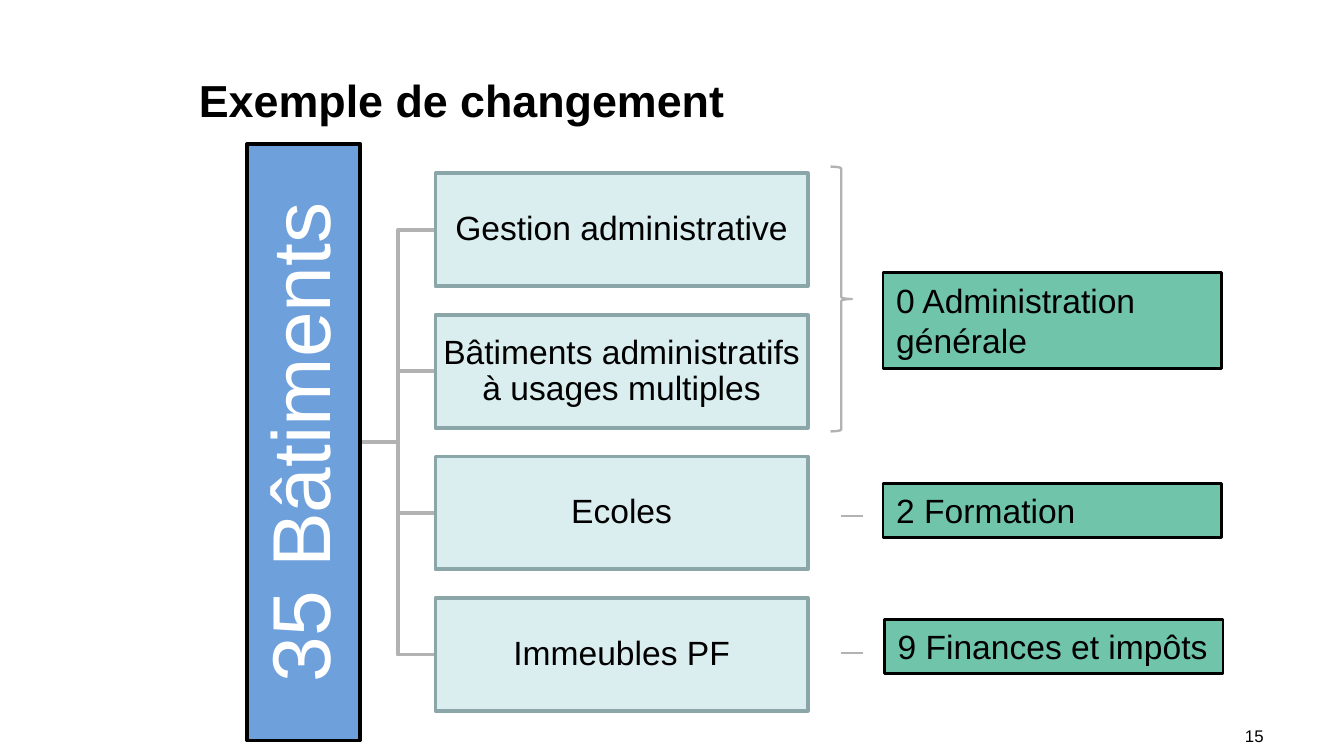
from dataclasses import dataclass

from lxml import etree
from pptx import Presentation
from pptx.dml.color import RGBColor
from pptx.enum.shapes import MSO_CONNECTOR, MSO_SHAPE
from pptx.enum.text import MSO_ANCHOR, PP_ALIGN
from pptx.oxml.ns import qn
from pptx.util import Inches, Pt

RECTANGLE = MSO_SHAPE.RECTANGLE
RIGHT_BRACE = MSO_SHAPE.RIGHT_BRACE
STRAIGHT = MSO_CONNECTOR.STRAIGHT
LEFT, CENTER, RIGHT = PP_ALIGN.LEFT, PP_ALIGN.CENTER, PP_ALIGN.RIGHT
TOP, MIDDLE = MSO_ANCHOR.TOP, MSO_ANCHOR.MIDDLE
TITLE_ONLY = 5


@dataclass(frozen=True)
class Theme:
    font: str = "Arial"
    black: str = "000000"
    white: str = "FFFFFF"
    gray: str = "B2B2B2"
    root_fill: str = "6EA0DC"
    branch_fill: str = "DAEDEF"
    branch_line: str = "8AA6A8"
    target_fill: str = "70C4A9"
    title_size: int = 24
    root_size: int = 44
    label_size: int = 18
    number_size: int = 9
    thick: float = 2
    medium: float = 1.5
    thin: float = 1.25


THEME = Theme()


def write_text(shape, text, size=THEME.label_size, color=THEME.black, bold=False,
               align=LEFT, anchor=TOP, inset=None, spacing=1.0):
    frame = shape.text_frame
    frame.word_wrap = True
    frame.vertical_anchor = anchor
    if inset is not None:
        frame.margin_left = frame.margin_right = Inches(inset)
        frame.margin_top = frame.margin_bottom = Inches(inset)
    para = frame.paragraphs[0]
    para.alignment = align
    para.line_spacing = spacing
    span = para.add_run()
    span.text = text
    span.font.name = THEME.font
    span.font.size = Pt(size)
    span.font.bold = bold
    span.font.color.rgb = RGBColor.from_string(color)


def style_line(shape, color, width):
    shape.line.color.rgb = RGBColor.from_string(color)
    shape.line.width = Pt(width)


def add_box(page, box, fill, line, width, kind=RECTANGLE):
    shape = page.shapes.add_shape(kind, *map(Inches, box))
    shape.shadow.inherit = False
    if fill:
        shape.fill.solid()
        shape.fill.fore_color.rgb = RGBColor.from_string(fill)
    else:
        shape.fill.background()
    style_line(shape, line, width)
    return shape


def add_title(page, box, text):
    title = page.shapes.title
    title.left, title.top, title.width, title.height = map(Inches, box)
    write_text(title, text, size=THEME.title_size, bold=True, anchor=MIDDLE)


def add_page_number(page, box, text):
    number = page.shapes.add_textbox(*map(Inches, box))
    write_text(number, text, size=THEME.number_size, align=RIGHT)


def add_elbow(page, start, end):
    middle = (start[0] + end[0]) / 2
    points = [(middle, start[1]), (middle, end[1]), end]
    builder = page.shapes.build_freeform(*map(Inches, start))
    builder.add_line_segments([tuple(map(Inches, point)) for point in points], close=False)
    elbow = builder.convert_to_shape()
    elbow.shadow.inherit = False
    elbow.fill.background()
    style_line(elbow, THEME.gray, THEME.thick)


def add_tree(page, box, root, branches):
    left, top, width, height = box
    thickness, branch_width, margin = 0.84, 2.77, 0.22
    branch_left = left + width - branch_width
    center = top + height / 2
    first = top + margin
    pitch = (height - 2 * margin - thickness) / (len(branches) - 1)
    tops = [first + index * pitch for index in range(len(branches))]

    for branch_top in reversed(tops):
        add_elbow(page, (left + thickness, center),
                  (branch_left, branch_top + thickness / 2))

    root_left = left + (thickness - height) / 2
    root_box = (root_left, center - thickness / 2, height, thickness)
    shape = add_box(page, root_box, THEME.root_fill, THEME.black, THEME.thick)
    shape.rotation = 270
    write_text(shape, root, size=THEME.root_size, color=THEME.white, align=CENTER,
               anchor=MIDDLE, inset=0.03, spacing=0.9)

    for branch_top, label in zip(tops, branches):
        shape = add_box(page, (branch_left, branch_top, branch_width, thickness),
                        THEME.branch_fill, THEME.branch_line, THEME.thick)
        write_text(shape, label, align=CENTER, anchor=MIDDLE, inset=0.01, spacing=0.9)


def add_dash(page, left, top, length):
    dash = page.shapes.add_connector(STRAIGHT, Inches(left), Inches(top),
                                     Inches(left + length), Inches(top))
    style_line(dash, THEME.gray, THEME.thin)
    etree.SubElement(dash.element.spPr, qn("a:effectLst"))


def add_targets(page, box, targets):
    left, top, width, height = box
    target_width = 2.52
    target_left = left + width - target_width
    add_box(page, (left, top, 0.16, 1.97), None, THEME.gray, THEME.thin, RIGHT_BRACE)
    for offset in (2.6, 3.62):
        add_dash(page, left + 0.08, top + offset, 0.16)
    for label, shift, offset, target_height in targets:
        target_box = (target_left + shift, top + offset, target_width, target_height)
        shape = add_box(page, target_box, THEME.target_fill, THEME.black, THEME.medium)
        write_text(shape, label)


def main():
    deck = Presentation()
    deck.slide_width = Inches(10)
    deck.slide_height = deck.slide_width * 9 // 16
    page = deck.slides.add_slide(deck.slide_layouts[TITLE_ONLY])
    add_page_number(page, (9.02, 5.35, 0.48, 0.16), "15")
    add_title(page, (1.38, 0.45, 8.12, 0.58), "Exemple de changement")
    add_tree(page, (1.84, 1.07, 4.17, 4.44), "35 Bâtiments", [
        "Gestion administrative",
        "Bâtiments administratifs à usages multiples",
        "Ecoles",
        "Immeubles PF",
    ])
    add_targets(page, (6.18, 1.24, 2.91, 3.77), [
        ("0 Administration générale", 0, 0.79, 0.71),
        ("2 Formation", 0, 2.36, 0.4),
        ("9 Finances et impôts", 0.01, 3.37, 0.4),
    ])
    deck.save("out.pptx")


if __name__ == "__main__":
    main()
